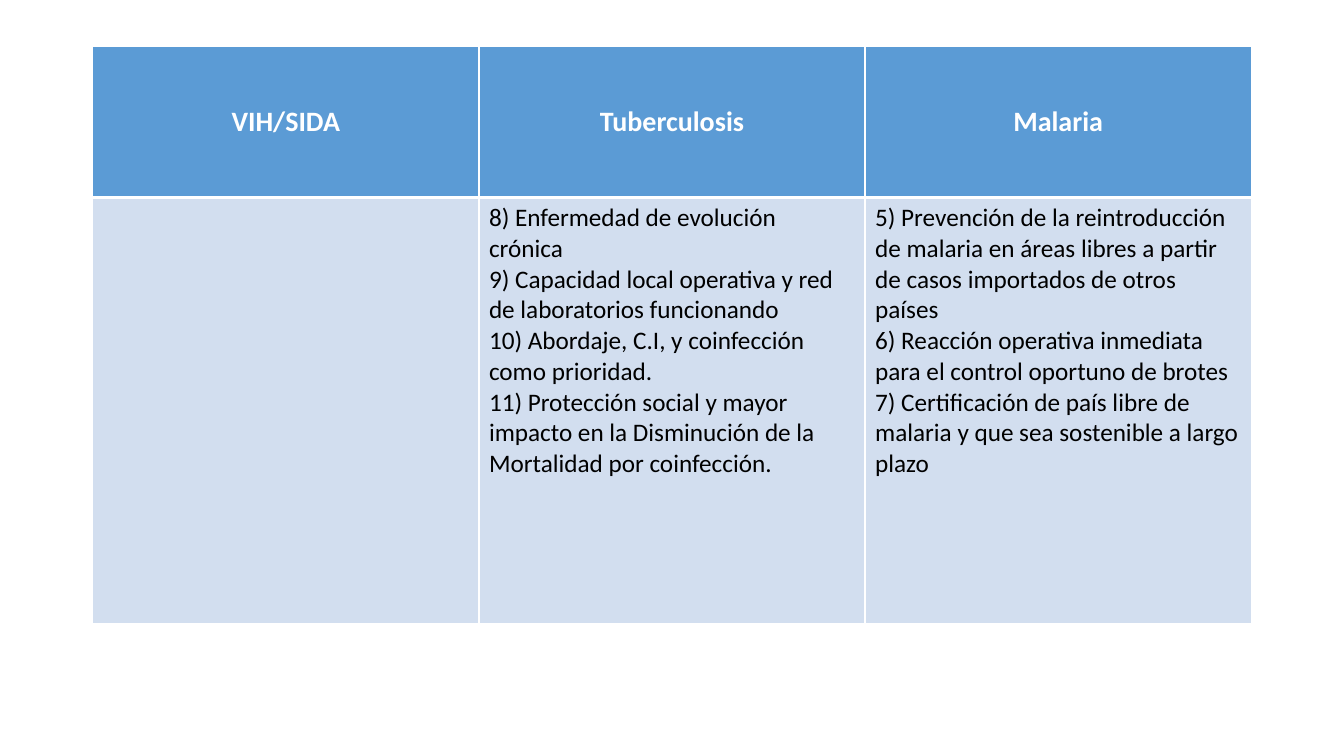
from lxml import etree
from pptx import Presentation
from pptx.dml.color import RGBColor
from pptx.enum import text
from pptx.oxml.ns import qn
from pptx.util import Inches, Pt

FONT = "Calibri"
WHITE, BLACK = "FFFFFF", "000000"
HEADER_FILL, BODY_FILL = "5B9BD5", "D2DEEF"
ROW_HEIGHTS = (1.5, 4.23)
COLUMN_WIDTH = 3.83

DISEASES = {
    "VIH/SIDA": [],
    "Tuberculosis": [
        "8) Enfermedad de evolución crónica",
        "9) Capacidad local operativa y red de laboratorios funcionando",
        "10) Abordaje, C.I, y coinfección como prioridad.",
        "11) Protección social y mayor impacto en la Disminución de la "
        "Mortalidad por coinfección.",
    ],
    "Malaria": [
        "5) Prevención de la reintroducción de malaria en áreas libres a "
        "partir de casos importados de otros países",
        "6) Reacción operativa inmediata para el control oportuno de brotes",
        "7) Certificación de país libre de malaria y que sea sostenible a "
        "largo plazo",
    ],
}


def color(hex_value):
    """Return the colour for a hex string."""
    return RGBColor.from_string(hex_value)


def set_borders(cell, widths):
    """Draw white cell borders, with widths in points keyed by side."""
    properties = cell._tc.get_or_add_tcPr()
    for side in "LRTB":
        line = etree.SubElement(properties, qn(f"a:ln{side}"), w=str(Pt(widths.get(side, 1))))
        fill = etree.SubElement(line, qn("a:solidFill"))
        etree.SubElement(fill, qn("a:srgbClr"), val=WHITE)


def format_text(cell, size, font_color, bold, alignment):
    """Format every paragraph and run of a cell."""
    for paragraph in cell.text_frame.paragraphs:
        paragraph.alignment = alignment
        paragraph.font.size = Pt(size)
        for run in paragraph.runs:
            run.font.name = FONT
            run.font.size = Pt(size)
            run.font.bold = bold
            run.font.color.rgb = color(font_color)


def fill_cell(cell, content, fill, borders):
    """Put text, borders and background in a cell."""
    cell.text_frame.text = content
    set_borders(cell, borders)
    cell.fill.solid()
    cell.fill.fore_color.rgb = color(fill)


def add_header(cell, name):
    """Fill a header cell with a disease name."""
    fill_cell(cell, name, HEADER_FILL, {"B": 3})
    cell.vertical_anchor = text.MSO_ANCHOR.MIDDLE
    format_text(cell, 20, WHITE, True, text.PP_ALIGN.CENTER)


def add_points(cell, points):
    """Fill a body cell with one paragraph per point."""
    fill_cell(cell, "\n".join(points), BODY_FILL, {"T": 3})
    format_text(cell, 18, BLACK, False, text.PP_ALIGN.LEFT)


def add_disease_table(slide):
    """Add the table with one column per disease."""
    frame = slide.shapes.add_table(
        len(ROW_HEIGHTS), len(DISEASES), Inches(0.92), Inches(0.46),
        Inches(COLUMN_WIDTH * len(DISEASES)), Inches(sum(ROW_HEIGHTS)))
    table = frame.table
    for row, height in zip(table.rows, ROW_HEIGHTS):
        row.height = Inches(height)
    for index, (name, points) in enumerate(DISEASES.items()):
        table.columns[index].width = Inches(COLUMN_WIDTH)
        add_header(table.cell(0, index), name)
        add_points(table.cell(1, index), points)


def main():
    """Build and save the presentation."""
    presentation = Presentation()
    presentation.slide_width = Inches(13.33)
    presentation.slide_height = Inches(7.5)
    slide = presentation.slides.add_slide(presentation.slide_layouts[6])
    add_disease_table(slide)
    presentation.save("out.pptx")


if __name__ == "__main__":
    main()
